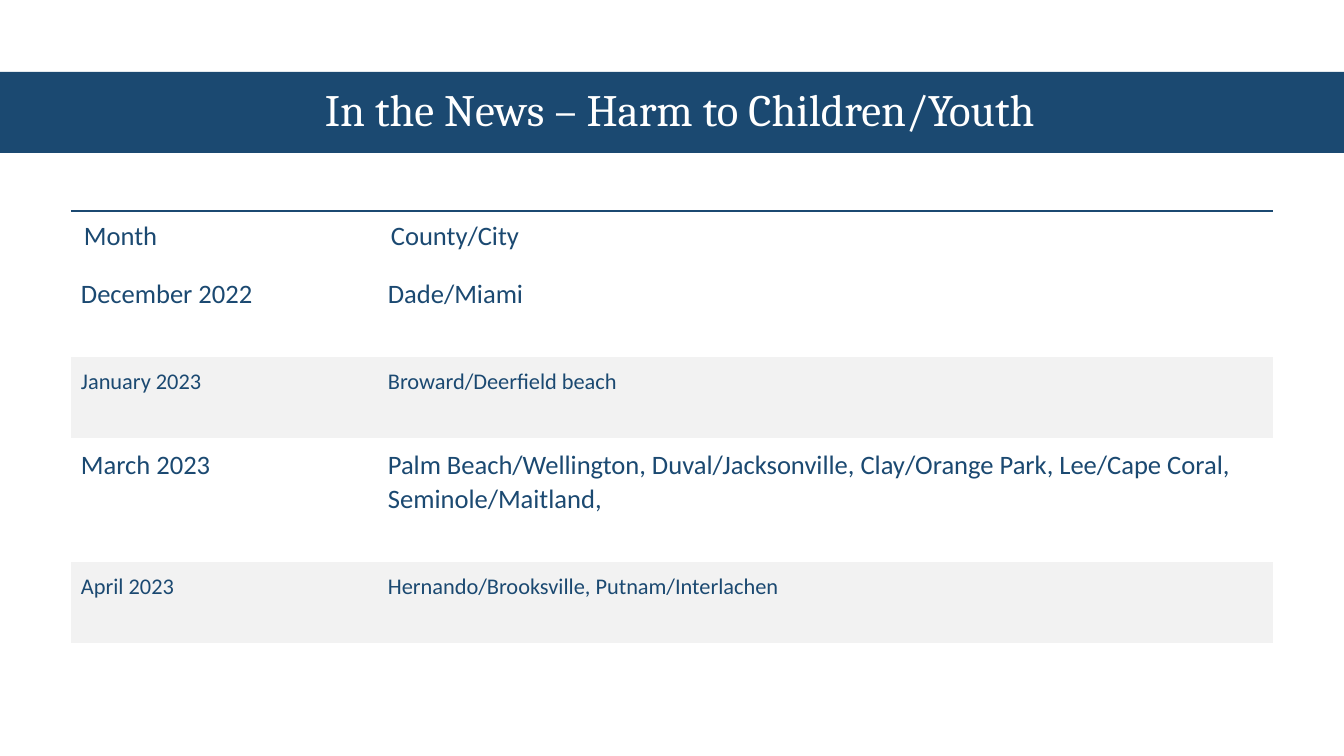
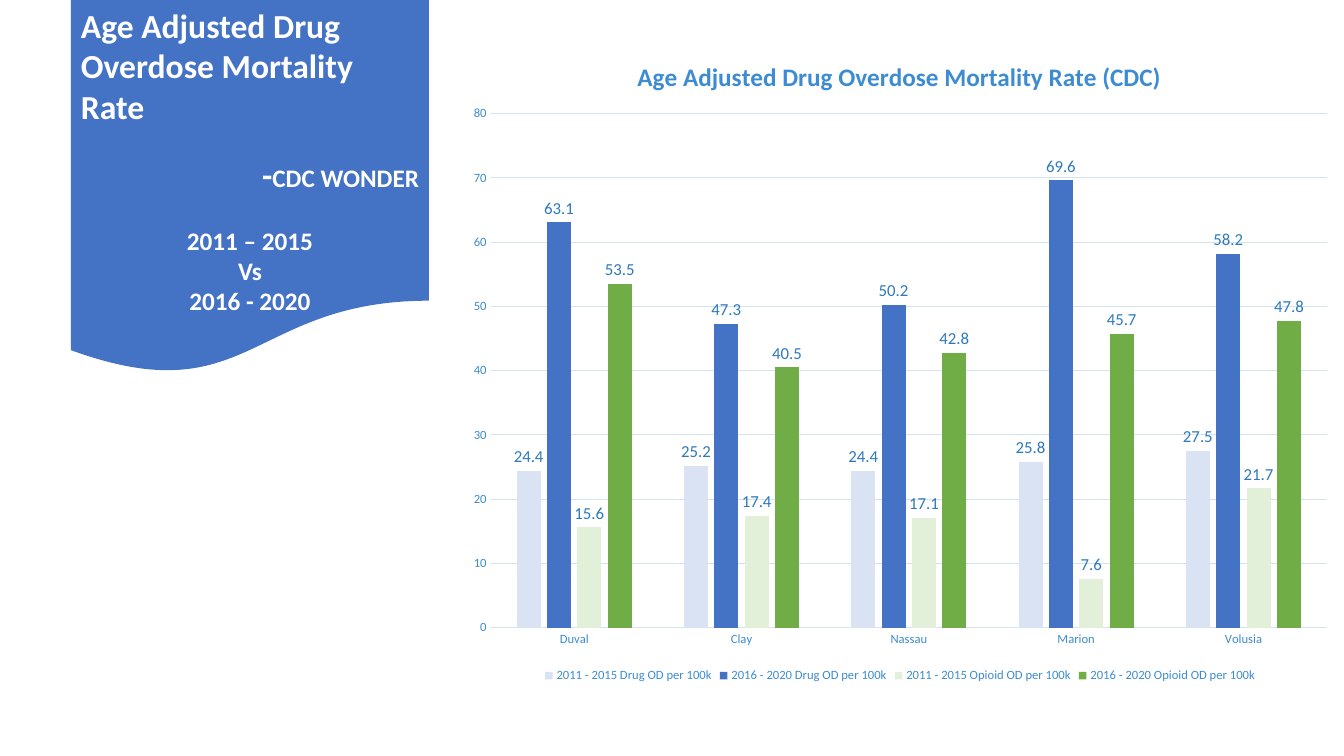
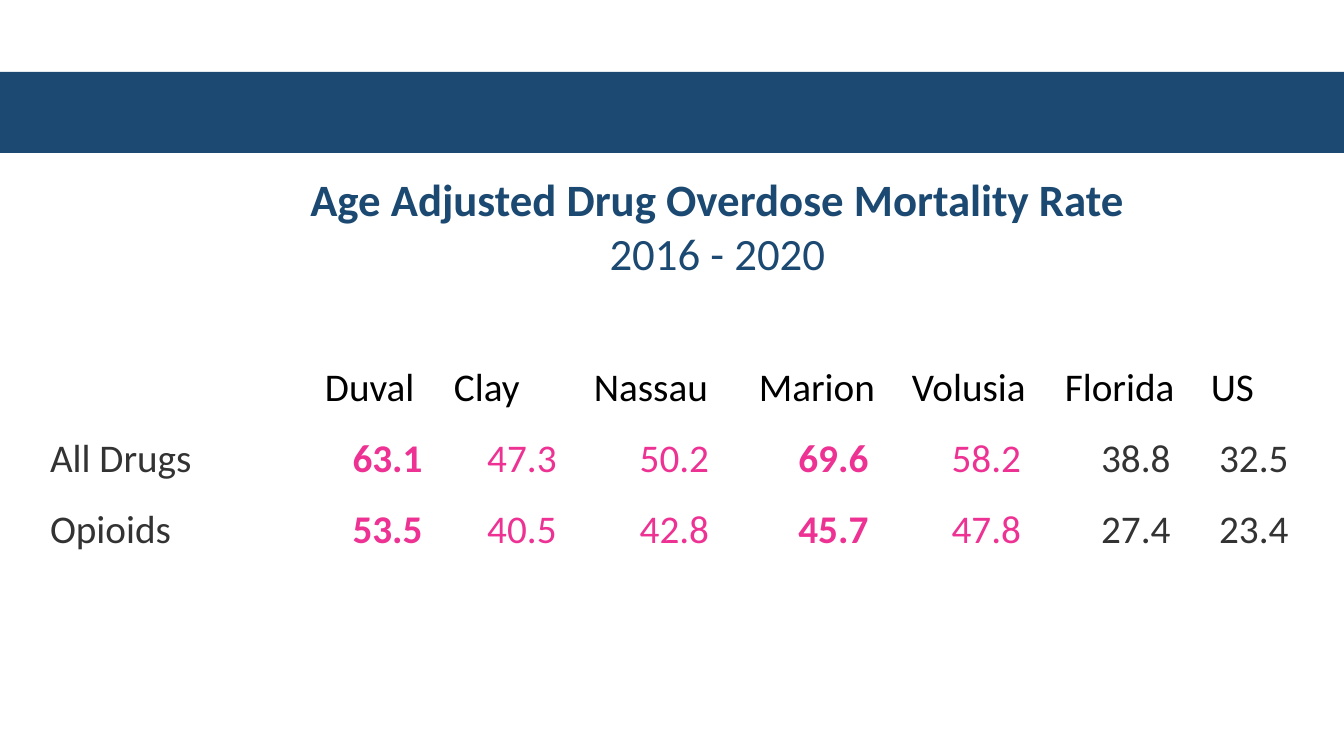
from lxml import etree
from pptx import Presentation
from pptx import util as u
from pptx.chart.data import CategoryChartData
from pptx.dml.color import RGBColor
from pptx.enum import chart as charts, shapes, text
from pptx.oxml.ns import qn

SCALE = 12192000 / 1344  # EMU in one px
NAVY, BLUE, GREEN, WHITE = "1B4971", "4472C4", "70AD47", "FFFFFF"
SKY, PALE, LABEL = "3D8CD1", "D2E4F4", "2D79BC"
BLACK, DARK, PINK, GREY = "000000", "333333", "ED3293", "F2F2F2"
BODY, HEADING = "Calibri", "Cambria"
LEFT, CENTER, RIGHT = text.PP_ALIGN.LEFT, text.PP_ALIGN.CENTER, text.PP_ALIGN.RIGHT
TOP, MIDDLE, BOTTOM = text.MSO_ANCHOR.TOP, text.MSO_ANCHOR.MIDDLE, text.MSO_ANCHOR.BOTTOM
NO_STYLE = "{2D5ABB26-0587-4C30-8999-92F81FD0307C}"


def px(*lengths):
    return [u.Emu(round(length * SCALE)) for length in lengths]


def color(value):
    return RGBColor.from_string(value)


def style_font(font, size, ink, bold=False, name=BODY):
    font.name, font.size, font.bold = name, u.Pt(size), bold
    font.color.rgb = color(ink)


def write(frame, content, size=18, ink=NAVY, bold=False, font=BODY, align=LEFT,
          before=0, after=0, spacing=1.0):
    """Add one paragraph; content is a string or a list of (string, size) runs."""
    first = frame.paragraphs[0]
    para = frame.add_paragraph() if first.runs else first
    para.alignment, para.line_spacing = align, spacing
    para.space_before, para.space_after = u.Pt(before), u.Pt(after)
    for words, points in [(content, size)] if isinstance(content, str) else content:
        span = para.add_run()
        span.text = words
        style_font(span.font, points, ink, bold, font)


def place(parent, index, inner=False, **fractions):
    """Set the manual layout of a chart part, as fractions of the chart."""
    for old in parent.findall(qn("c:layout")):
        parent.remove(old)
    layout = etree.Element(qn("c:layout"))
    manual = etree.SubElement(layout, qn("c:manualLayout"))
    if inner:
        etree.SubElement(manual, qn("c:layoutTarget"), val="inner")
    for key in ("x", "y"):
        etree.SubElement(manual, qn(f"c:{key}Mode"), val="edge")
    for key, value in fractions.items():
        etree.SubElement(manual, qn(f"c:{key}"), val=str(value))
    parent.insert(index, layout)


class Deck:
    def __init__(self):
        self.deck = Presentation()
        self.deck.slide_width, self.deck.slide_height = px(1344, 756)
        self.page = None

    def new_page(self, band=True):
        self.page = self.deck.slides.add_slide(self.deck.slide_layouts[6])
        if band:
            self.shape(shapes.MSO_SHAPE.RECTANGLE, (0, 72, 1344, 81), NAVY)

    def shape(self, kind, area, fill):
        shape = self.page.shapes.add_shape(kind, *px(*area))
        shape.shadow.inherit = False
        shape.fill.solid()
        shape.fill.fore_color.rgb = color(fill)
        shape.line.fill.background()

    def box(self, area, anchor=TOP):
        frame = self.page.shapes.add_textbox(*px(*area)).text_frame
        frame.word_wrap = True
        frame.vertical_anchor = anchor
        return frame

    def table(self, left, top, widths, heights):
        area = px(left, top, sum(widths), sum(heights))
        table = self.page.shapes.add_table(len(heights), len(widths), *area).table
        table.first_row = table.horz_banding = False
        table._tbl.tblPr.find(qn("a:tableStyleId")).text = NO_STYLE
        for column, width in zip(table.columns, px(*widths)):
            column.width = width
        for row, height in zip(table.rows, px(*heights)):
            row.height = height
        return table

    def cell(self, cell, content, insets, fill=None, anchor=TOP, rule=None, **style):
        (cell.margin_left, cell.margin_top,
         cell.margin_right, cell.margin_bottom) = px(*insets)
        cell.vertical_anchor = anchor
        if fill:
            cell.fill.solid()
            cell.fill.fore_color.rgb = color(fill)
        else:
            cell.fill.background()
        if rule:  # top border
            line = etree.Element(qn("a:lnT"), w=str(u.Pt(2.25)))
            solid = etree.SubElement(line, qn("a:solidFill"))
            etree.SubElement(solid, qn("a:srgbClr"), val=rule)
            cell._tc.get_or_add_tcPr().insert(0, line)
        if content:
            write(cell.text_frame, content, **style)

    def column_chart(self, area, title, categories, series):
        data = CategoryChartData()
        data.categories = categories
        for name, values, _ in series:
            data.add_series(name, values)
        chart = self.page.shapes.add_chart(
            charts.XL_CHART_TYPE.COLUMN_CLUSTERED, *px(*area), data).chart
        style_font(chart.font, 10, NAVY)
        # Title and legend
        chart.has_title = True
        write(chart.chart_title.text_frame, title, size=18, ink=SKY, bold=True, align=CENTER)
        place(chart._chartSpace.chart.find(qn("c:title")), 1, x=0.2, y=0.04)
        chart.has_legend = True
        chart.legend.position = charts.XL_LEGEND_POSITION.BOTTOM
        chart.legend.include_in_layout = False
        style_font(chart.legend.font, 9, SKY)
        # Axes
        for axis in (chart.category_axis, chart.value_axis):
            axis.major_tick_mark = axis.minor_tick_mark = charts.XL_TICK_MARK.NONE
            style_font(axis.tick_labels.font, 9, SKY)
        value_axis = chart.value_axis
        value_axis.minimum_scale, value_axis.maximum_scale = 0, 80
        value_axis.major_unit = 10
        value_axis.format.line.fill.background()
        for line in (chart.category_axis.format.line, value_axis.major_gridlines.format.line):
            line.color.rgb, line.width = color(PALE), u.Pt(0.75)
        # Columns
        plot = chart.plots[0]
        plot.gap_width, plot.overlap, plot.vary_by_categories = 219, -27, False
        for drawn, (_, _, fill) in zip(plot.series, series):
            drawn.format.fill.solid()
            drawn.format.fill.fore_color.rgb = color(fill)
            labels = drawn.data_labels
            labels.show_value = True
            labels.position = charts.XL_LABEL_POSITION.OUTSIDE_END
            style_font(labels.font, 12, LABEL)
        place(chart._chartSpace.chart.plotArea, 0, inner=True, x=0.04, y=0.13, w=0.94, h=0.78)


def news_page(deck):
    deck.new_page()
    write(deck.box((62, 71, 1236, 81), MIDDLE), "In the News – Harm to Children/Youth",
          size=32, ink=WHITE, font=HEADING, align=CENTER, after=6, spacing=0.9)
    rows = [
        ("Month", "County/City"),
        ("December 2022", "Dade/Miami"),
        ("January 2023", "Broward/Deerfield beach"),
        ("March 2023", "Palm Beach/Wellington, Duval/Jacksonville, Clay/Orange Park, "
                       "Lee/Cape Coral, Seminole/Maitland,"),
        ("April 2023", "Hernando/Brooksville, Putnam/Interlachen"),
    ]
    table = deck.table(71, 211, [307, 895], [56, 90, 81, 124, 81])
    for r, row in enumerate(rows):
        header, shaded = r == 0, r in (2, 4)
        side = 13 if header else 10
        for c, content in enumerate(row):
            deck.cell(table.cell(r, c), content, (side, 9, side, 9),
                      fill=GREY if shaded else None, rule=NAVY if header else None,
                      size=16 if shaded else 19, spacing=1.0 if header else 1.07)


def chart_page(deck):
    deck.new_page(band=False)
    deck.shape(shapes.MSO_SHAPE.FLOWCHART_DOCUMENT, (71, 0, 358, 375), BLUE)
    frame = deck.box((71, 0, 358, 407))
    lines = [
        ("Age Adjusted Drug Overdose Mortality Rate", 24, LEFT, 0),
        ([("-", 24), ("CDC WONDER", 18)], 18, RIGHT, 20),
        ("2011 – 2015", 18, CENTER, 22),
        ("Vs", 18, CENTER, 0),
        ("2016 - 2020", 18, CENTER, 0),
    ]
    for content, size, align, before in lines:
        write(frame, content, size=size, ink=WHITE, bold=True, align=align, before=before)
    deck.column_chart(
        (455, 28, 890, 659), "Age Adjusted Drug Overdose Mortality Rate (CDC)",
        ["Duval", "Clay", "Nassau", "Marion", "Volusia"],
        [("2011 - 2015 Drug OD per 100k", [24.4, 25.2, 24.4, 25.8, 27.5], "DAE3F3"),
         ("2016 - 2020 Drug OD per 100k", [63.1, 47.3, 50.2, 69.6, 58.2], BLUE),
         ("2011 - 2015 Opioid OD per 100k", [15.6, 17.4, 17.1, 7.6, 21.7], "E2F0D9"),
         ("2016 - 2020 Opioid OD per 100k", [53.5, 40.5, 42.8, 45.7, 47.8], GREEN)])


def rates_page(deck):
    deck.new_page()
    rows = [
        ["", "Duval", "Clay", "Nassau", "Marion", "Volusia", "Florida", "US"],
        ["All Drugs", "63.1", "47.3", "50.2", "69.6", "58.2", "38.8", "32.5"],
        ["Opioids", "53.5", "40.5", "42.8", "45.7", "47.8", "27.4", "23.4"],
    ]
    table = deck.table(48, 354, [275, 129, 140, 165, 153, 153, 146, 90], [58, 71, 71])
    for r, row in enumerate(rows):
        for c, content in enumerate(row):
            number = r > 0 and c > 0
            county = number and c <= 5
            deck.cell(table.cell(r, c), content, (2, 2, 2, 0), anchor=BOTTOM, size=28,
                      ink=PINK if county else DARK if r else BLACK,
                      bold=number and c in (1, 4), align=CENTER if number else LEFT)
    frame = deck.box((200, 167, 1035, 119))
    write(frame, "Age Adjusted Drug Overdose Mortality Rate", size=32, bold=True, align=CENTER)
    write(frame, "2016 - 2020", size=32, align=CENTER)


def main():
    deck = Deck()
    news_page(deck)
    chart_page(deck)
    rates_page(deck)
    deck.deck.save("out.pptx")


if __name__ == "__main__":
    main()
